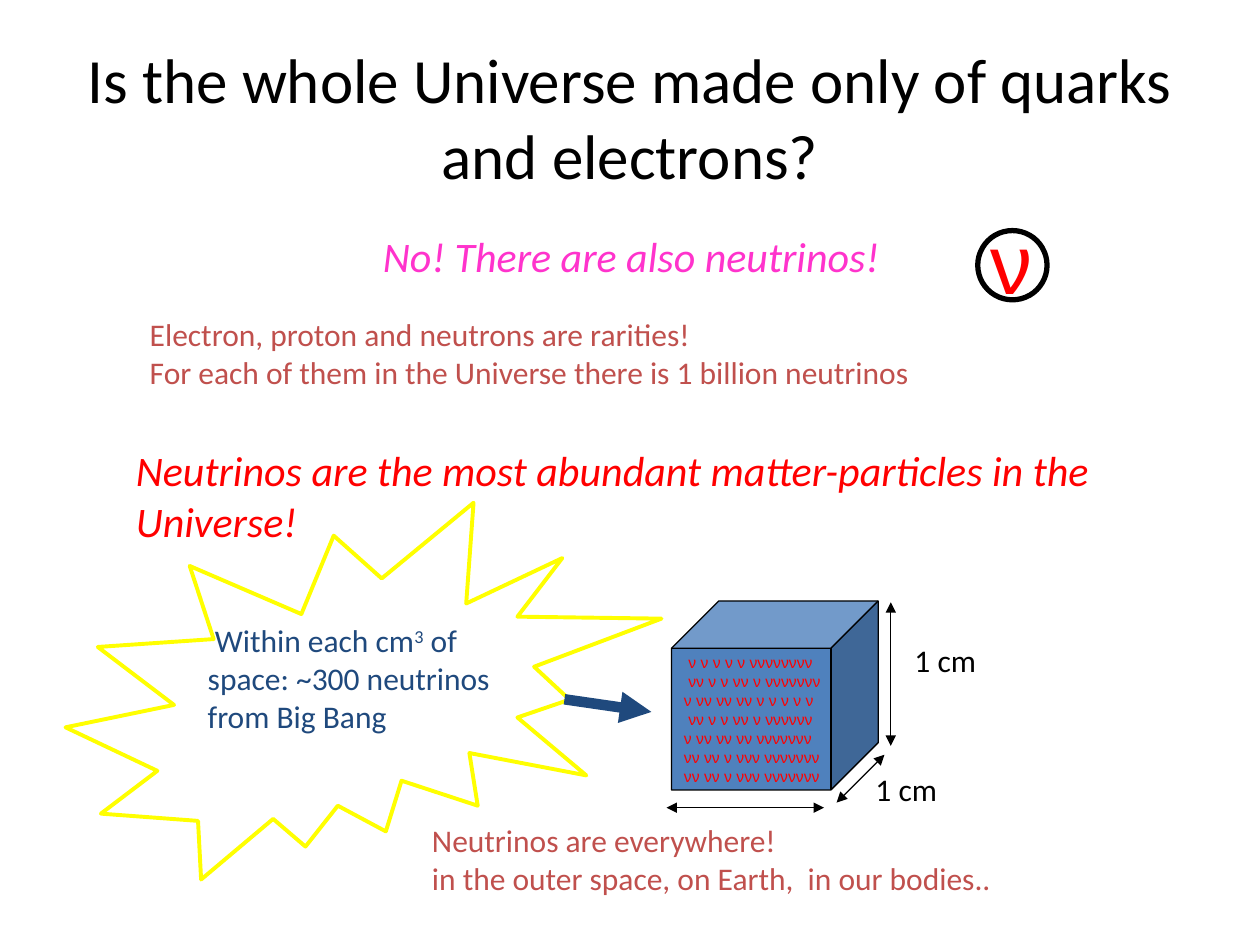
import pptx
import pptx.util
import pptx.dml.color
import pptx.enum.shapes
import pptx.enum.text
import pptx.oxml
import pptx.oxml.ns

Inches = pptx.util.Inches
Pt = pptx.util.Pt
SHAPE = pptx.enum.shapes.MSO_SHAPE
ALIGN = pptx.enum.text.PP_ALIGN
ANCHOR = pptx.enum.text.MSO_ANCHOR
AUTO_SIZE = pptx.enum.text.MSO_AUTO_SIZE

BLACK, WHITE, RED = "000000", "FFFFFF", "FF0000"
PINK, BRICK, NAVY = "FF33CC", "C0504D", "1F497D"
YELLOW, BLUE = "FFFF00", "4F81BD"


def rgb(hex_color):
    return pptx.dml.color.RGBColor.from_string(hex_color)


class SlideBuilder:
    font = "Calibri"
    symbol_font = "Arial"

    def __init__(self, slide):
        self.slide = slide

    def fill_frame(self, frame, paragraphs, size, color, font=None, italic=False,
                   align=ALIGN.LEFT):
        """Fill a frame; each paragraph is a list of (text, baseline percent) runs."""
        for index, runs in enumerate(paragraphs):
            paragraph = frame.add_paragraph() if index else frame.paragraphs[0]
            paragraph.alignment = align
            for text, baseline in runs:
                run = paragraph.add_run()
                run.text = text
                run.font.name = font or self.font
                run.font.size = Pt(size)
                run.font.italic = italic
                run.font.color.rgb = rgb(color)
                if baseline:
                    run.font._element.set("baseline", str(baseline * 1000))

    def text(self, box, lines, size, color, wrap=False, grow=True,
             anchor=ANCHOR.TOP, **style):
        textbox = self.slide.shapes.add_textbox(*map(Inches, box))
        frame = textbox.text_frame
        frame.word_wrap = wrap
        frame.auto_size = AUTO_SIZE.SHAPE_TO_FIT_TEXT if grow else AUTO_SIZE.NONE
        frame.vertical_anchor = anchor
        paragraphs = [[(line, 0)] if isinstance(line, str) else line for line in lines]
        self.fill_frame(frame, paragraphs, size, color, **style)
        return textbox

    def shape(self, kind, box, line_color, line_width, fill=None):
        shape = self.slide.shapes.add_shape(kind, *map(Inches, box))
        shape.shadow.inherit = False
        if fill:
            shape.fill.solid()
            shape.fill.fore_color.rgb = rgb(fill)
        else:
            shape.fill.background()
        shape.line.color.rgb = rgb(line_color)
        shape.line.width = Pt(line_width)
        return shape

    def arrow(self, start, end, color=BLACK, width=0.75, both_ends=True):
        connector = self.slide.shapes.add_connector(
            pptx.enum.shapes.MSO_CONNECTOR.STRAIGHT, *map(Inches, start + end))
        connector.line.color.rgb = rgb(color)
        connector.line.width = Pt(width)
        line = connector.line._get_or_add_ln()
        for tag in ("a:headEnd", "a:tailEnd") if both_ends else ("a:tailEnd",):
            tip = pptx.oxml.parse_xml(f"<{tag} {pptx.oxml.ns.nsdecls('a')} type='triangle'/>")
            line.append(tip)
        no_effects = f"<a:effectLst {pptx.oxml.ns.nsdecls('a')}/>"
        connector._element.spPr.append(pptx.oxml.parse_xml(no_effects))


def main():
    deck = pptx.Presentation()
    deck.slide_width, deck.slide_height = Inches(10), Inches(7.5)
    slide = deck.slides.add_slide(deck.slide_layouts[6])
    builder = SlideBuilder(slide)

    builder.text((0.5, 0.3, 9, 1.25),
                 ["Is the whole Universe made only of quarks and electrons?"],
                 36, BLACK, wrap=True, grow=False, anchor=ANCHOR.MIDDLE,
                 align=ALIGN.CENTER)
    builder.text((0.51, 1.78, 9, 4.95), ["No! There are also neutrinos!"],
                 24, PINK, wrap=True, grow=False, italic=True, align=ALIGN.CENTER)
    builder.text((1.09, 2.45, 7.53, 0.77),
                 ["Electron, proton and neutrons are rarities!",
                  "For each of them in the Universe there is 1 billion neutrinos"],
                 18, BRICK)
    builder.text((0.98, 3.48, 8.07, 3.64),
                 ["Neutrinos are the most abundant matter-particles in the Universe!"],
                 24, RED, wrap=True, italic=True)

    nu = builder.text((7.76, 1.62, 0.55, 0.9), ["ν"], 48, RED,
                      font=builder.symbol_font)
    nu_ring = builder.shape(SHAPE.OVAL, (7.76, 1.83, 0.55, 0.55), BLACK, 3)
    slide.shapes.add_group_shape([nu, nu_ring])

    cube = builder.shape(SHAPE.CUBE, (5.33, 4.77, 1.64, 1.5), BLACK, 0.75, BLUE)
    cube.adjustments[0] = 0.25
    cube.text_frame.word_wrap = False
    cube.text_frame.vertical_anchor = ANCHOR.MIDDLE
    neutrino_rows = [
        " ν ν ν ν ν νννννννν",
        " νν ν ν νν ν ννννννν",
        "ν νν νν νν ν ν ν ν ν",
        " νν ν ν νν ν νννννν",
        "ν νν νν νν ννννννν",
        "νν νν ν ννν ννννννν",
        "νν νν ν ννν ννννννν",
    ]
    builder.fill_frame(cube.text_frame, [[(row, 0)] for row in neutrino_rows], 9, RED,
                       font=builder.symbol_font)

    builder.arrow((7.07, 4.78), (7.07, 5.92))
    builder.text((7.16, 5.04, 0.8, 0.43), ["1 cm"], 18, BLACK)

    builder.shape(SHAPE.EXPLOSION2, (0.52, 3.99, 4.73, 2.99), YELLOW, 2.25, WHITE)
    builder.text((1.55, 4.88, 3.02, 1.1),
                 [[(" Within each cm", 0), ("3", 30), (" of", 0)],
                  "space: ~300 neutrinos", "from Big Bang"],
                 18, NAVY)
    builder.text((3.33, 6.47, 5.58, 0.77),
                 ["Neutrinos are everywhere!",
                  "in the outer space, on Earth,  in our bodies.."],
                 18, BRICK)

    builder.arrow((4.48, 5.55), (5.17, 5.65), NAVY, 6, both_ends=False)
    builder.arrow((5.29, 6.41), (6.54, 6.41))
    builder.arrow((6.64, 6.37), (7.02, 5.99))
    builder.text((6.85, 6.06, 0.8, 0.43), ["1 cm"], 18, BLACK)

    deck.save("out.pptx")


if __name__ == "__main__":
    main()
